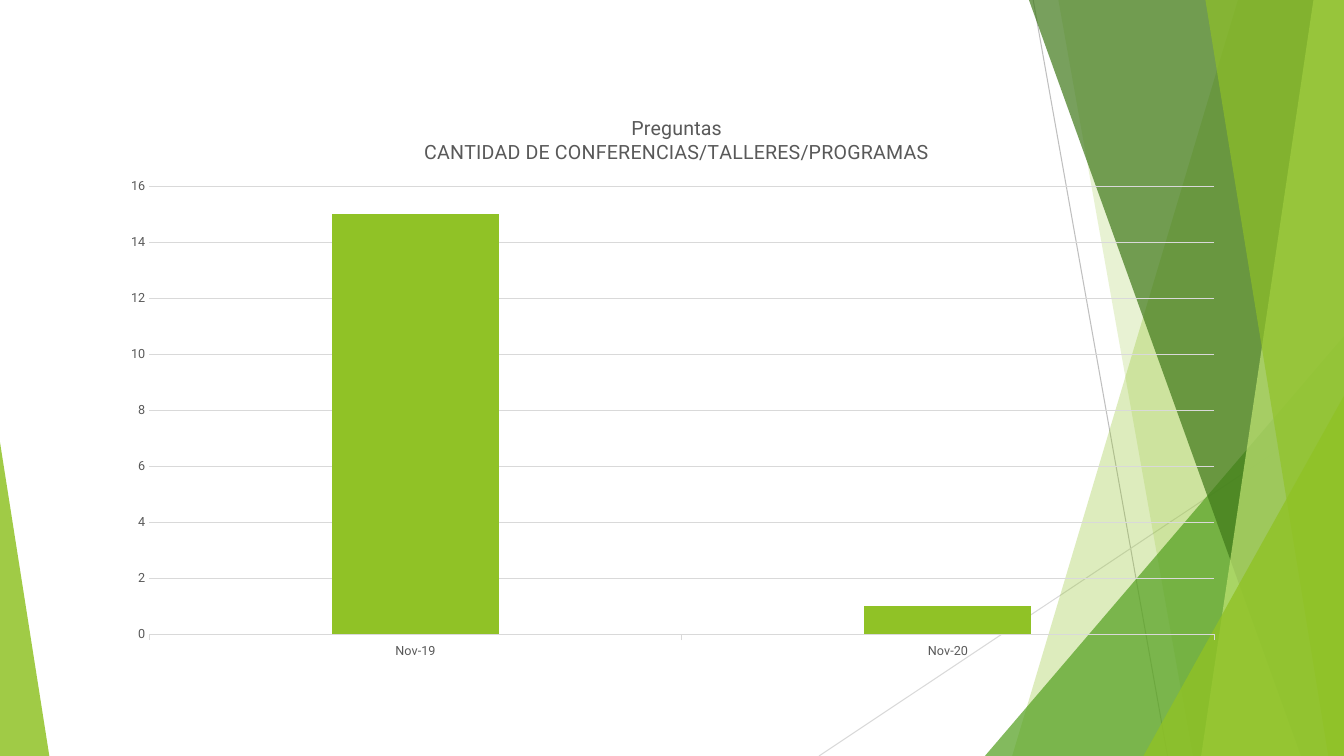
from lxml import etree
from pptx import Presentation
from pptx import util as u
from pptx.chart.data import CategoryChartData
from pptx.dml.color import RGBColor
from pptx.enum import chart as ch, shapes
from pptx.oxml import parse_xml
from pptx.oxml.ns import nsdecls, qn

PX = 9525
W, H = 1280, 720
FONT = "Roboto"
COLORS = {
    "lime": "90C226",
    "green": "54A021",
    "forest": "3F7819",
    "pale": "C0E474",
    "text": "595959",
    "grid": "D9D9D9",
    "gray": "BFBFBF",
}


class Deck:
    def __init__(self):
        self.prs = Presentation()
        self.prs.slide_width = self.px(W)
        self.prs.slide_height = self.px(H)
        self.s = self.prs.slides.add_slide(self.prs.slide_layouts[6])

    def px(self, n):
        return u.Emu(n * PX)

    def rgb(self, name):
        return RGBColor.from_string(COLORS[name])

    def paint(self, sp, color, alpha):
        sp.shadow.inherit = False
        sp.line.fill.background()
        sp.fill.solid()
        sp.fill.fore_color.rgb = self.rgb(color)
        clr = sp.fill._xPr.find(qn("a:solidFill"))[0]
        etree.SubElement(clr, qn("a:alpha")).set("val", str(alpha * 1000))

    def line(self, x1, y1, x2, y2, color):
        c = self.s.shapes.add_connector(
            shapes.MSO_CONNECTOR.STRAIGHT, *map(self.px, (x1, y1, x2, y2)))
        c.line.color.rgb = self.rgb(color)
        c.line.width = u.Pt(0.75)
        etree.SubElement(c._element.spPr, qn("a:effectLst"))

    def facet(self, top, bottom, color, alpha):
        fb = self.s.shapes.build_freeform(top, 0, scale=PX)
        fb.add_line_segments([(W, 0), (W, H), (bottom, H)], close=True)
        self.paint(fb.convert_to_shape(), color, alpha)

    def triangle(self, x, y, w, apex, color, alpha):
        sp = self.s.shapes.add_shape(
            shapes.MSO_SHAPE.ISOSCELES_TRIANGLE,
            *map(self.px, (x, y, w, H - y)))
        sp.adjustments[0] = apex
        self.paint(sp, color, alpha)

    def font(self, f, size):
        f.name = FONT
        f.size = u.Pt(size)
        f.bold = False
        f.color.rgb = self.rgb("text")

    def rule(self, fmt):
        fmt.line.color.rgb = self.rgb("grid")
        fmt.line.width = u.Pt(0.75)

    def layout(self, parent, before, **box):
        old = parent.find(qn("c:layout"))
        if old is not None:
            parent.remove(old)
        target = '<c:layoutTarget val="inner"/>' if "w" in box else ""
        modes = "".join(f'<c:{k}Mode val="edge"/>' for k in "xy")
        sizes = "".join(f'<c:{k} val="{v}"/>' for k, v in box.items())
        xml = (f'<c:layout {nsdecls("c")}><c:manualLayout>{target}{modes}'
               f'{sizes}</c:manualLayout></c:layout>')
        parent.find(qn(before)).addprevious(parse_xml(xml))

    def title(self, chart, lines):
        tf = chart.chart_title.text_frame
        for i, words in enumerate(lines):
            p = tf.add_paragraph() if i else tf.paragraphs[0]
            r = p.add_run()
            r.text = words
            self.font(r.font, 14)
        chart.chart_title.include_in_layout = False
        self.layout(chart.chart_title._element, "c:overlay", x=0.28, y=0.03)

    def columns(self, x, y, w, h, title, name, cats, vals):
        data = CategoryChartData()
        data.categories = cats
        data.add_series(name, vals)
        chart = self.s.shapes.add_chart(
            ch.XL_CHART_TYPE.COLUMN_CLUSTERED,
            *map(self.px, (x, y, w, h)), data).chart
        self.font(chart.font, 10)
        chart.has_legend = False
        self.title(chart, title)

        plot = chart.plots[0]
        plot.gap_width = 219
        plot.overlap = -27
        plot.vary_by_categories = False
        bars = plot.series[0].format.fill
        bars.solid()
        bars.fore_color.rgb = self.rgb("lime")

        cat, val = chart.category_axis, chart.value_axis
        for axis in (cat, val):
            self.font(axis.tick_labels.font, 9)
        cat.major_tick_mark = ch.XL_TICK_MARK.OUTSIDE
        self.rule(cat.format)
        val.major_tick_mark = ch.XL_TICK_MARK.NONE
        val.minimum_scale, val.maximum_scale, val.major_unit = 0, 16, 2
        val.format.line.fill.background()
        self.rule(val.major_gridlines.format)
        area = chart._chartSpace.chart.plotArea
        self.layout(area, "c:barChart", x=0.04, y=0.16, w=0.94, h=0.78)


def main():
    d = Deck()
    d.line(984, 0, 1112, H, "gray")
    d.line(W, 387, 780, H, "grid")
    d.facet(1179, 964, "lime", 30)
    d.facet(1008, 1136, "lime", 20)
    d.triangle(938, 320, 342, 1, "green", 72)
    d.facet(980, 1239, "forest", 70)
    d.facet(1251, 1144, "pale", 70)
    d.facet(1148, 1265, "lime", 65)
    d.triangle(1089, 377, 191, 1, "lime", 80)
    d.triangle(0, 421, 47, 0, "lime", 85)
    d.columns(99, 90, 1079, 547,
              ["Preguntas", "CANTIDAD DE CONFERENCIAS/TALLERES/PROGRAMAS"],
              "Series 1", ["Nov-19", "Nov-20"], [15, 1])
    d.prs.save("out.pptx")


if __name__ == "__main__":
    main()
